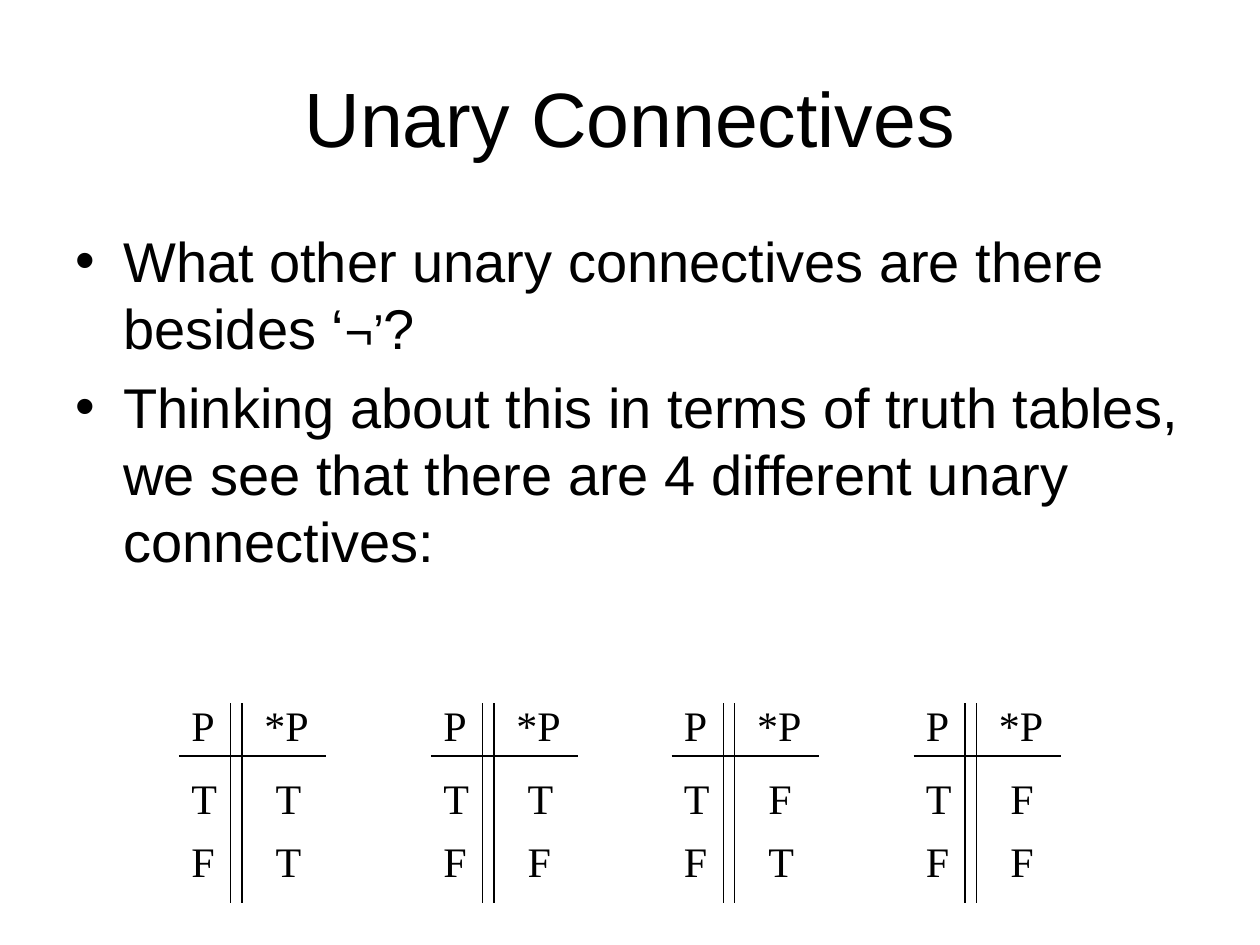
from lxml.etree import SubElement
from pptx import Presentation
from pptx.dml.color import RGBColor
from pptx.enum.shapes import MSO_CONNECTOR
from pptx.enum.text import MSO_ANCHOR, MSO_AUTO_SIZE, PP_ALIGN
from pptx.oxml.ns import qn
from pptx.util import Inches, Pt

BLACK = RGBColor(0, 0, 0)

deck = Presentation()
deck.slide_width, deck.slide_height = Inches(10), Inches(7.5)
page = deck.slides.add_slide(deck.slide_layouts[6])


def add_text(paragraphs, left, top, width, height, font="Arial", wrap=True,
             align=PP_ALIGN.LEFT, anchor=MSO_ANCHOR.TOP, bullet=False):
    """Add a text box; each paragraph is a list of (text, size) runs."""
    box = page.shapes.add_textbox(Inches(left), Inches(top), Inches(width), Inches(height))
    frame = box.text_frame
    frame.word_wrap = wrap
    frame.auto_size = MSO_AUTO_SIZE.NONE if wrap else MSO_AUTO_SIZE.SHAPE_TO_FIT_TEXT
    frame.vertical_anchor = anchor
    for index, runs in enumerate(paragraphs):
        para = frame.add_paragraph() if index else frame.paragraphs[0]
        para.alignment = align
        if bullet:
            para.space_before = Pt(6.4)
            properties = para._p.get_or_add_pPr()
            properties.set("marL", str(Inches(0.38)))
            properties.set("indent", str(Inches(-0.38)))
            SubElement(properties, qn("a:buFont"), typeface="Arial")
            SubElement(properties, qn("a:buChar"), char="•")
        for text, size in runs:
            span = para.add_run()
            span.text = text
            span.font.name, span.font.size = font, Pt(size)
            span.font.color.rgb = BLACK


def add_line(x1, y1, x2, y2):
    line = page.shapes.add_connector(
        MSO_CONNECTOR.STRAIGHT, Inches(x1), Inches(y1), Inches(x2), Inches(y2))
    line.line.color.rgb = BLACK
    line.line.width = Pt(0.75)
    SubElement(line._element.spPr, qn("a:effectLst"))


add_text([[("Unary Connectives", 44)]], 0.5, 0.3, 9, 1.25,
         align=PP_ALIGN.CENTER, anchor=MSO_ANCHOR.MIDDLE)
add_text([
    [("What other unary connectives are there besides ‘", 32), ("¬’", 28), ("?", 32)],
    [("Thinking about this in terms of truth tables, "
      "we see that there are 4 different unary connectives:", 32)],
], 0.5, 1.75, 9, 1.93, bullet=True)

# Truth tables: left edge and the values of *P when P is T and F
truth_tables = [(1.42, "TT"), (3.42, "TF"), (5.33, "FT"), (7.25, "FF")]
for left, (when_true, when_false) in truth_tables:
    for rule in (left + 0.41, left + 0.5):
        add_line(rule, 5.58, rule, 7.17)
    add_line(left, 6, left + 1.17, 6)
    cells = [
        ("P", 0, 5.5, 0.39), ("*P", 0.58, 5.5, 0.55),
        ("T", 0, 6.08, 0.4), ("F", 0, 6.58, 0.4),
        (when_true, 0.67, 6.08, 0.4), (when_false, 0.67, 6.58, 0.4),
    ]
    for text, offset, top, width in cells:
        add_text([[(text, 24)]], left + offset, top, width, 0.5,
                 font="Times New Roman", wrap=False)

deck.save("out.pptx")
